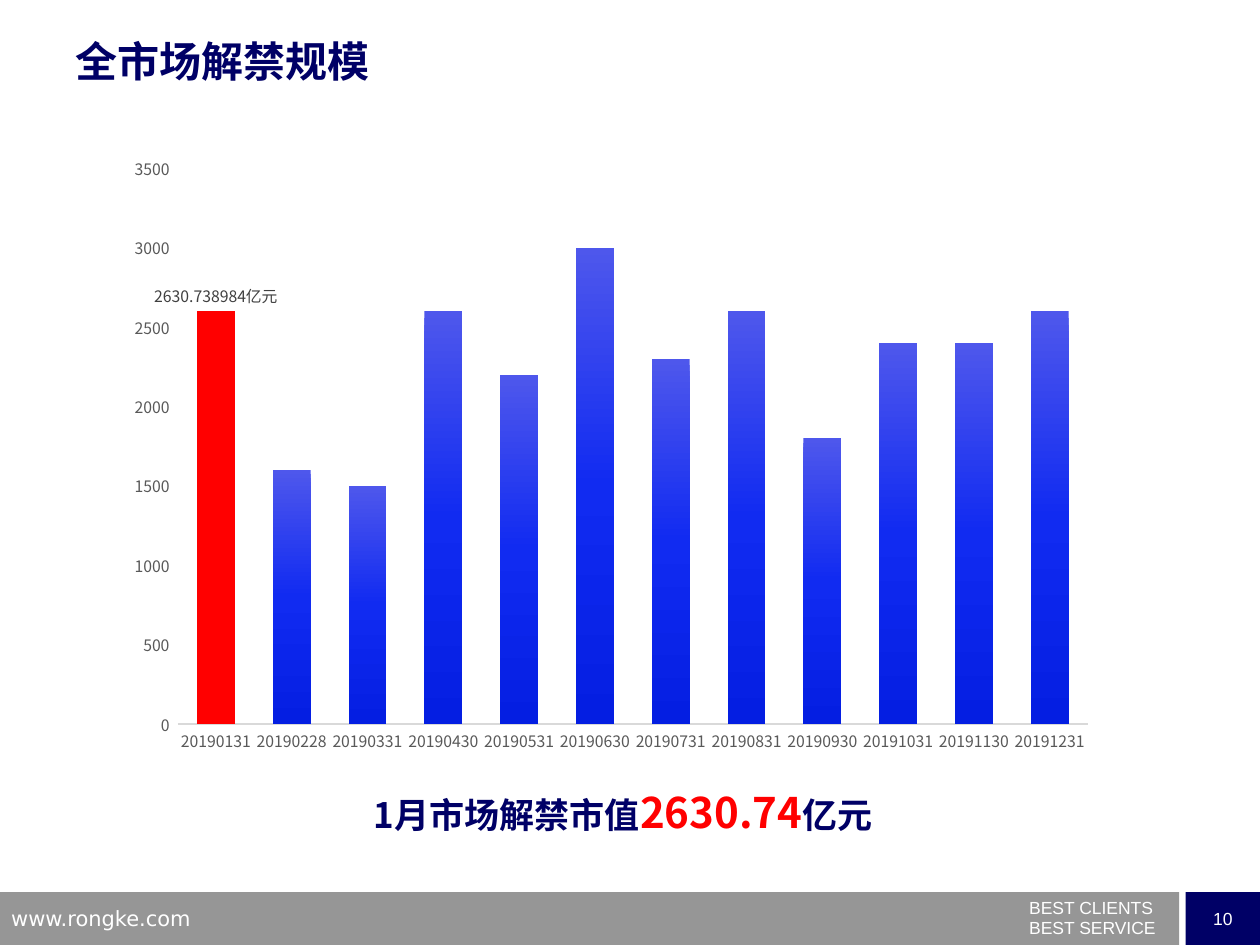
"""Build a slide with a column chart of monthly market unlock values."""
from lxml import etree
from pptx import Presentation
from pptx.chart.data import CategoryChartData
from pptx.dml.color import RGBColor as RGB
from pptx.enum.chart import XL_CHART_TYPE as CT, XL_LABEL_POSITION as LP, XL_TICK_MARK as TM
from pptx.enum.shapes import MSO_SHAPE as SHAPE
from pptx.enum.text import MSO_ANCHOR as ANCHOR, PP_ALIGN as ALIGN
from pptx.oxml import parse_xml
from pptx.oxml.ns import nsdecls, qn
from pptx.util import Inches, Pt

COLORS = {
    "navy": "000066", "gray": "969696", "white": "FFFFFF", "red": "FF0000",
    "axis": "595959", "line": "D9D9D9", "label": "404040",
}
GRADIENT = [(0, "4E57EC"), (50, "112BF1"), (100, "041EE2")]
CJK = "Noto Sans CJK SC"
DATES = ["0131", "0228", "0331", "0430", "0531", "0630",
         "0731", "0831", "0930", "1031", "1130", "1231"]
VALUES = [2600, 1600, 1500, 2600, 2200, 3000, 2300, 2600, 1800, 2400, 2400, 2600]


def rgb(name):
    """Return the named colour."""
    return RGB.from_string(COLORS[name])


def add_east_asian(element):
    """Repeat each Latin typeface as the East Asian one."""
    for latin in list(element.iter(qn("a:latin"))):
        ea = etree.Element(qn("a:ea"), typeface=latin.get("typeface"))
        latin.addnext(ea)


class Deck:
    """Hold the style and the current slide."""

    def __init__(self):
        """Start a presentation with one title slide."""
        self.prs = Presentation()
        self.prs.slide_width, self.prs.slide_height = Inches(10), Inches(7.5)
        self.slide = self.prs.slides.add_slide(self.prs.slide_layouts[5])

    def style(self, font, size, color, name=CJK, bold=None):
        """Set the usual font properties."""
        font.name, font.size, font.bold = name, Pt(size), bold
        font.color.rgb = rgb(color)

    def title(self, text, box):
        """Fill and place the title placeholder."""
        sp = self.slide.shapes.title
        sp.left, sp.top, sp.width, sp.height = map(Inches, box)
        tf = sp.text_frame
        tf.text, tf.vertical_anchor = text, ANCHOR.TOP
        p = tf.paragraphs[0]
        p.alignment = ALIGN.LEFT
        self.style(p.font, 24, "navy", bold=True)
        add_east_asian(sp._element)

    def rect(self, box, color, text=""):
        """Add a plain rectangle with optional centred text."""
        sp = self.slide.shapes.add_shape(SHAPE.RECTANGLE, *map(Inches, box))
        sp.shadow.inherit = False
        sp.fill.solid()
        sp.fill.fore_color.rgb = rgb(color)
        sp.line.fill.background()
        if text:
            tf = sp.text_frame
            tf.text, tf.word_wrap, tf.vertical_anchor = text, False, ANCHOR.MIDDLE
            p = tf.paragraphs[0]
            p.alignment = ALIGN.CENTER
            self.style(p.font, 10, "white", "Arial")

    def text(self, box, lines, size, name, spacing=None, before=0):
        """Add a white text box with one paragraph per line."""
        sp = self.slide.shapes.add_textbox(*map(Inches, box))
        tf = sp.text_frame
        tf.word_wrap, tf.text = True, "\n".join(lines)
        for i, p in enumerate(tf.paragraphs):
            p.line_spacing = spacing
            if i and before:
                p.space_before = Pt(before)
            self.style(p.font, size, "white", name)

    def caption(self, box, runs):
        """Add a bold line made of differently styled runs."""
        sp = self.slide.shapes.add_textbox(*map(Inches, box))
        tf = sp.text_frame
        tf.word_wrap = True
        for text, size, color in runs:
            r = tf.paragraphs[0].add_run()
            r.text = text
            self.style(r.font, size, color, bold=True)
        add_east_asian(sp._element)

    def columns(self, box, categories, values, label):
        """Add the column chart with its first column highlighted."""
        data = CategoryChartData()
        data.categories = categories
        data.add_series("Series 1", values)
        chart = self.slide.shapes.add_chart(
            CT.COLUMN_CLUSTERED, *map(Inches, box), data).chart
        chart.has_legend = chart.has_title = False
        chart.font.name, chart.font.size = CJK, Pt(10)
        for axis in (chart.category_axis, chart.value_axis):
            axis.major_tick_mark = axis.minor_tick_mark = TM.NONE
            axis.has_major_gridlines = False
            self.style(axis.tick_labels.font, 9, "axis")
        chart.category_axis.format.line.color.rgb = rgb("line")
        chart.category_axis.format.line.width = Pt(1)
        axis = chart.value_axis
        axis.format.line.fill.background()
        axis.minimum_scale, axis.maximum_scale, axis.major_unit = 0, 3500, 500
        axis.tick_labels.number_format = "0_ "
        axis.tick_labels.number_format_is_linked = False

        plot = chart.plots[0]
        plot.gap_width, plot.overlap, plot.vary_by_categories = 100, -24, False
        series = plot.series[0]
        series.invert_if_negative = False
        self.gradient(series.format)
        point = series.points[0]
        point.format.fill.solid()
        point.format.fill.fore_color.rgb = rgb("red")
        point.data_label.position = LP.OUTSIDE_END
        tf = point.data_label.text_frame
        tf.word_wrap = False
        r = tf.paragraphs[0].add_run()
        r.text = label
        self.style(r.font, 9, "label")
        add_east_asian(chart._chartSpace)

    def gradient(self, fmt):
        """Give a chart format the vertical three-stop gradient."""
        fmt.fill.gradient()
        fmt.fill.gradient_angle = 270
        stops = fmt.fill.gradient_stops
        gs_list = stops[0]._gs.getparent()
        for gs in list(gs_list):
            gs_list.remove(gs)
        for pos, color in GRADIENT:
            gs_list.append(parse_xml(
                f'<a:gs {nsdecls("a")} pos="{pos * 1000}"><a:srgbClr val="{color}"/></a:gs>'))


def main():
    """Build and save the slide."""
    deck = Deck()
    deck.rect((0, 7.08, 9.36, 0.42), "gray")
    deck.rect((9.41, 7.08, 0.59, 0.42), "navy", "10")
    deck.text((8.07, 7.14, 1.92, 0.35), ["BEST CLIENTS", "BEST SERVICE"],
              10, "Arial", spacing=0.5, before=5.5)
    deck.text((-0.01, 7.14, 2.41, 0.26), ["www.rongke.com"], 12, "DejaVu Sans")
    deck.title("全市场解禁规模", (0.5, 0.23, 9, 1.25))
    deck.caption((2.87, 6.19, 4.74, 0.5), [
        ("1月市场解禁市值", 20, "navy"), ("2630.74", 24, "red"), ("亿元", 20, "navy")])
    deck.columns((0.91, 1.15, 7.88, 4.91), ["2019" + d for d in DATES], VALUES,
                 "2630.738984亿元")
    deck.prs.save("out.pptx")


if __name__ == "__main__":
    main()
